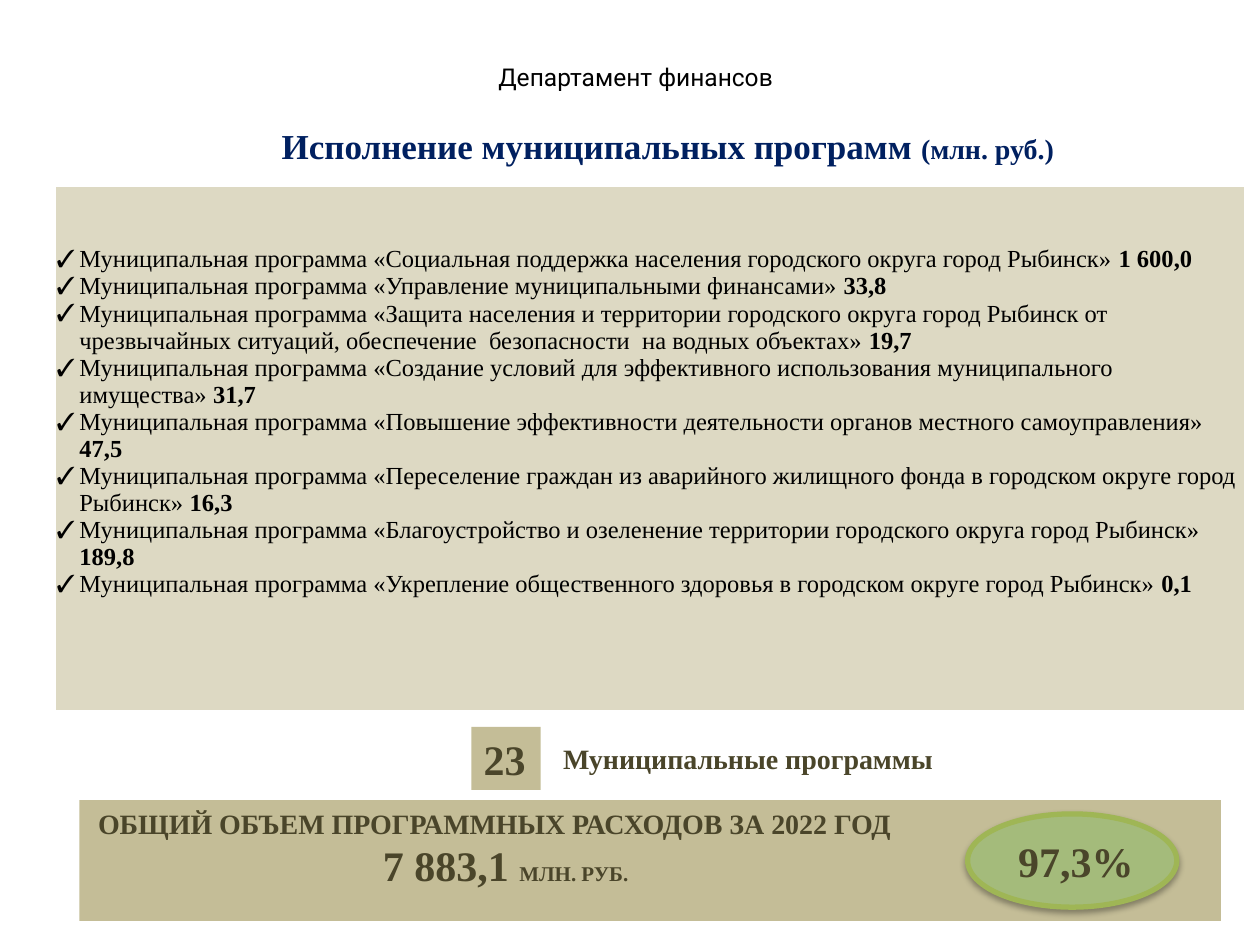
import pptx
import pptx.dml.color
import pptx.enum.shapes
import pptx.enum.text
import pptx.oxml
import pptx.oxml.ns
import pptx.util
from pptx.util import Inches

SERIF = "Times New Roman"
NAVY = "002060"
BROWN = "4A452A"
BLACK = "000000"
WHITE = "FFFFFF"
SAND = "DDD9C3"
KHAKI = "C4BD97"
GREEN = "A4BB7B"
OLIVE = "9FB655"

ALIGN = pptx.enum.text.PP_ALIGN
ANCHOR = pptx.enum.text.MSO_ANCHOR
SHAPE = pptx.enum.shapes.MSO_SHAPE

PROGRAMMES = [
    ("Социальная поддержка населения городского округа город Рыбинск", "1 600,0"),
    ("Управление муниципальными финансами", "33,8"),
    ("Защита населения и территории городского округа город Рыбинск от чрезвычайных "
     "ситуаций, обеспечение  безопасности  на водных объектах", "19,7"),
    ("Создание условий для эффективного использования муниципального имущества", "31,7"),
    ("Повышение эффективности деятельности органов местного самоуправления", "47,5"),
    ("Переселение граждан из аварийного жилищного фонда в городском округе город Рыбинск", "16,3"),
    ("Благоустройство и озеленение территории городского округа город Рыбинск", "189,8"),
    ("Укрепление общественного здоровья в городском округе город Рыбинск", "0,1"),
]


def rgb(value):
    return pptx.dml.color.RGBColor.from_string(value)


def xml(tag, content="", **attributes):
    listed = "".join(f' {name}="{value}"' for name, value in attributes.items())
    namespace = pptx.oxml.ns.nsdecls("a")
    return pptx.oxml.parse_xml(f"<a:{tag} {namespace}{listed}>{content}</a:{tag}>")


def set_font(font, size, color, bold=False, name=SERIF):
    font.name = name
    font.size = pptx.util.Pt(size)
    font.bold = bold
    font.color.rgb = rgb(color)


def write(paragraph, text, size, color, bold=True, name=SERIF, align=ALIGN.LEFT):
    paragraph.alignment = align
    paragraph.add_run().text = text
    set_font(paragraph.font, size, color, bold, name)


def write_sizes(paragraph, parts, color, align=ALIGN.LEFT):
    paragraph.alignment = align
    for text, size in parts:
        run = paragraph.add_run()
        run.text = text
        set_font(run.font, size, color, bold=True)


def indent(paragraph, left, first=0):
    properties = paragraph._p.get_or_add_pPr()
    properties.set("marL", str(Inches(left)))
    properties.set("indent", str(Inches(first)))
    return properties


def add_text_box(slide, left, top, width, height, wrap=True, anchor=ANCHOR.TOP):
    box = slide.shapes.add_textbox(Inches(left), Inches(top), Inches(width), Inches(height))
    box.text_frame.word_wrap = wrap
    box.text_frame.vertical_anchor = anchor
    return box.text_frame


def add_filled_shape(slide, kind, left, top, width, height, fill, anchor=ANCHOR.TOP):
    shape = slide.shapes.add_shape(kind, Inches(left), Inches(top), Inches(width), Inches(height))
    shape.shadow.inherit = False
    shape.fill.solid()
    shape.fill.fore_color.rgb = rgb(fill)
    shape.line.fill.background()
    shape.text_frame.vertical_anchor = anchor
    return shape


def add_soft_shadow(shape):
    effects = shape._element.spPr.find(pptx.oxml.ns.qn("a:effectLst"))
    color = f'<a:srgbClr val="{BLACK}"><a:alpha val="32000"/></a:srgbClr>'
    effects.append(xml("outerShdw", color, blurRad=pptx.util.Pt(3.5),
                       dist=pptx.util.Pt(2.2), dir=90 * 60000, rotWithShape=0))


def set_cell_borders(cell, color):
    properties = cell._tc.get_or_add_tcPr()
    line = f'<a:solidFill><a:srgbClr val="{color}"/></a:solidFill>'
    for position, side in enumerate(("lnL", "lnR", "lnT", "lnB")):
        properties.insert(position, xml(side, line, w=pptx.util.Pt(1)))


def add_programme(paragraph, title, amount):
    properties = indent(paragraph, 0.18, -0.18)
    properties.append(xml("buFont", typeface=SERIF))
    properties.append(xml("buChar", char="✓"))
    set_font(paragraph.font, 14, BLACK)
    paragraph.add_run().text = f"Муниципальная программа «{title}» "
    value = paragraph.add_run()
    value.text = amount
    value.font.bold = True


def add_programme_table(slide):
    frame = slide.shapes.add_table(1, 1, Inches(0.44), Inches(1.48), Inches(9.44), Inches(4.16))
    cell = frame.table.cell(0, 0)
    cell.fill.solid()
    cell.fill.fore_color.rgb = rgb(SAND)
    set_cell_borders(cell, WHITE)
    cell.vertical_anchor = ANCHOR.MIDDLE
    cell.margin_left = cell.margin_top = cell.margin_right = Inches(0.01)
    cell.margin_bottom = Inches(0.43)
    for number, (title, amount) in enumerate(PROGRAMMES):
        paragraphs = cell.text_frame
        paragraph = paragraphs.add_paragraph() if number else paragraphs.paragraphs[0]
        add_programme(paragraph, title, amount)


def add_programme_count(slide):
    count = add_filled_shape(slide, SHAPE.RECTANGLE, 3.74, 5.77, 0.55, 0.5, KHAKI)
    write(count.text_frame.paragraphs[0], "23", 24, BROWN)
    label = add_text_box(slide, 4.37, 5.84, 3.18, 0.37, wrap=False)
    write(label.paragraphs[0], "Муниципальные программы", 16, BROWN)


def add_total(slide):
    total = add_filled_shape(slide, SHAPE.RECTANGLE, 0.63, 6.35, 9.06, 0.96, KHAKI)
    heading = total.text_frame.paragraphs[0]
    indent(heading, 0.05)
    write(heading, "ОБЩИЙ ОБЪЕМ ПРОГРАММНЫХ РАСХОДОВ ЗА 2022 ГОД", 16, BROWN)
    amount = total.text_frame.add_paragraph()
    indent(amount, 2.31)
    write_sizes(amount, [("7 883,1 ", 24), ("МЛН. РУБ.", 12)], BROWN)
    share = add_filled_shape(slide, SHAPE.OVAL, 7.68, 6.46, 1.66, 0.74, GREEN, ANCHOR.MIDDLE)
    share.line.color.rgb = rgb(OLIVE)
    share.line.width = pptx.util.Pt(3)
    add_soft_shadow(share)
    write(share.text_frame.paragraphs[0], "97,3%", 24, BROWN, align=ALIGN.RIGHT)


def main():
    presentation = pptx.Presentation()
    presentation.slide_width = Inches(10)
    presentation.slide_height = Inches(7.5)
    slide = presentation.slides.add_slide(presentation.slide_layouts[6])

    title = add_text_box(slide, 0.34, 0.92, 9.92, 0.47, anchor=ANCHOR.MIDDLE)
    write_sizes(title.paragraphs[0],
                [("Исполнение муниципальных программ ", 20), ("(млн. руб.)", 16)],
                NAVY, ALIGN.CENTER)
    add_programme_table(slide)
    add_programme_count(slide)
    add_total(slide)
    department = add_text_box(slide, 3.19, 0.44, 3.71, 0.34)
    write(department.paragraphs[0], "Департамент финансов", 14, BLACK,
          bold=False, name="Roboto", align=ALIGN.CENTER)

    presentation.save("out.pptx")


if __name__ == "__main__":
    main()
